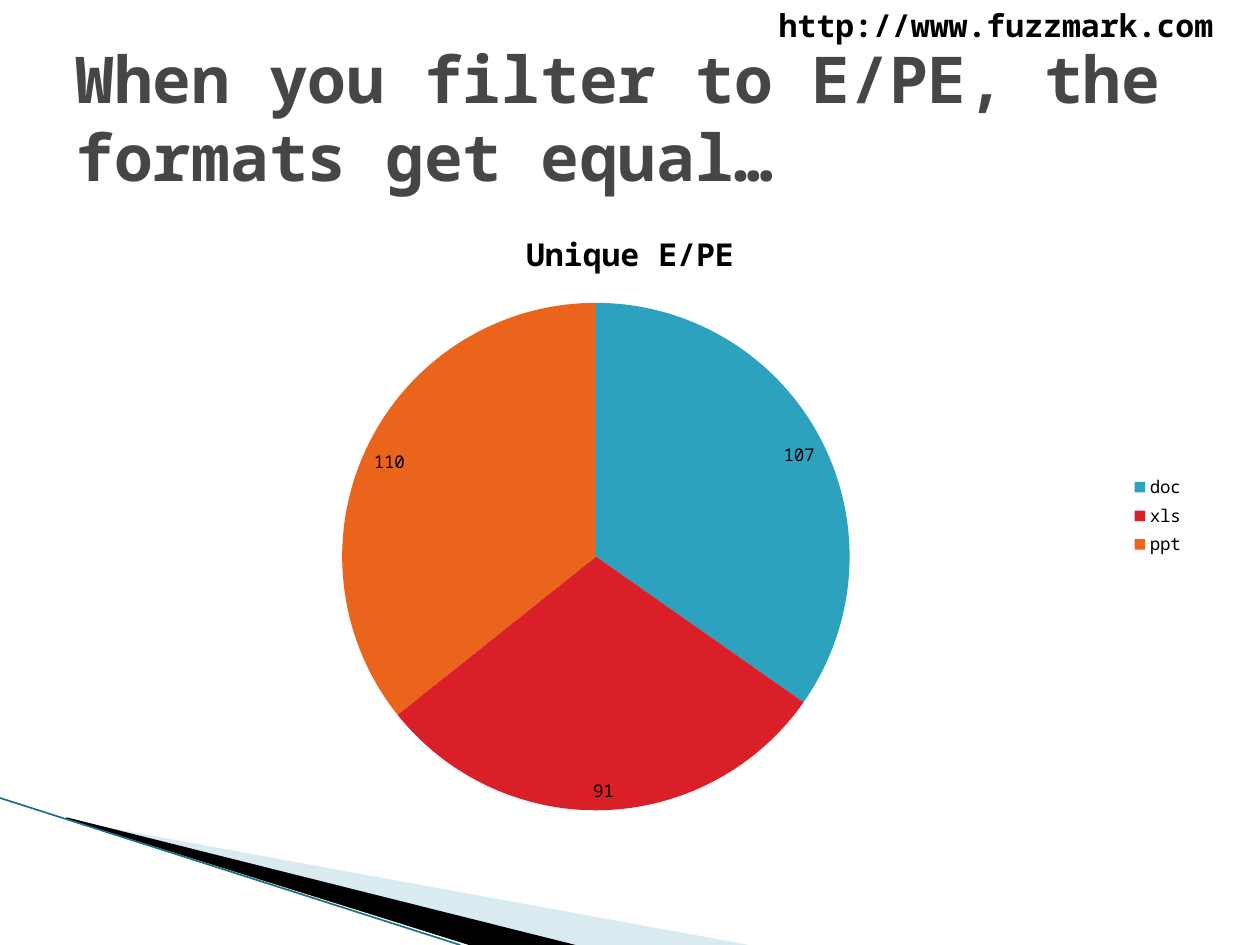
from dataclasses import dataclass

from lxml.etree import SubElement
from pptx import Presentation
from pptx.chart.data import CategoryChartData
from pptx.dml.color import RGBColor
from pptx.enum.chart import XL_CHART_TYPE, XL_LABEL_POSITION, XL_LEGEND_POSITION
from pptx.enum.shapes import MSO_CONNECTOR
from pptx.enum.text import MSO_ANCHOR
from pptx.oxml.ns import qn
from pptx.util import Pt


@dataclass(frozen=True)
class Theme:
    font: str = "Noto Sans Mono"
    ink: str = "000000"
    title: str = "464646"
    pale: str = "A0CBDC"
    edge: str = "1A7088"
    slices: tuple = ("2DA2BF", "DA1F28", "EB641B")
    title_size: float = 36.9
    heading_size: float = 18
    label_size: float = 10


THEME = Theme()


def rgb(value):
    return RGBColor.from_string(value)


def style_font(font, size, color, bold=False):
    font.name = THEME.font
    font.size = Pt(size)
    font.bold = bold
    font.color.rgb = rgb(color)


def add_text(s, box, text, size, color, anchor=MSO_ANCHOR.TOP):
    tf = s.shapes.add_textbox(*map(Pt, box)).text_frame
    tf.word_wrap = True
    tf.vertical_anchor = anchor
    tf.text = text
    style_font(tf.paragraphs[0].runs[0].font, size, color, bold=True)


def add_wedge(s, box, points, color, opacity=100):
    left, top, width, height = box
    start, *rest = [(left + x * width, top + y * height) for x, y in points]
    builder = s.shapes.build_freeform(*start, scale=Pt(1))
    builder.add_line_segments(rest, close=True)
    sp = builder.convert_to_shape()
    sp.shadow.inherit = False
    sp.line.fill.background()
    sp.fill.solid()
    sp.fill.fore_color.rgb = rgb(color)
    if opacity < 100:
        clr = sp.fill._xPr.find(qn("a:solidFill"))[0]
        SubElement(clr, qn("a:alpha")).set("val", str(opacity * 1000))


def add_corner(s, box):
    left, top, width, height = box
    add_wedge(s, (left + 39.6, top + 12, 388.8, height - 12),
              [(0, 0.01), (1, 1), (0.74, 1), (0, 0)], THEME.pale, 40)
    add_wedge(s, (left + 38.2, top + 11.3, 290.8, height - 11.3),
              [(0, 0), (1, 1), (0.79, 1), (0, 0.01)], THEME.ink)
    edge = s.shapes.add_connector(MSO_CONNECTOR.STRAIGHT, Pt(left), Pt(top),
                                  Pt(left + 263), Pt(top + height))
    edge.line.color.rgb = rgb(THEME.edge)
    edge.line.width = Pt(0.95)
    SubElement(edge._element.spPr, qn("a:effectLst"))


def add_pie(s, box, name, values):
    data = CategoryChartData()
    data.categories = list(values)
    data.add_series(name, list(values.values()))
    chart = s.shapes.add_chart(XL_CHART_TYPE.PIE, *map(Pt, box), data).chart
    style_font(chart.font, THEME.label_size, THEME.ink)

    chart.has_title = True
    tf = chart.chart_title.text_frame
    tf.text = name
    style_font(tf.paragraphs[0].runs[0].font, THEME.heading_size, THEME.ink, bold=True)

    chart.has_legend = True
    chart.legend.position = XL_LEGEND_POSITION.RIGHT
    chart.legend.include_in_layout = False

    plot = chart.plots[0]
    plot.vary_by_categories = True
    plot.has_data_labels = True
    labels = plot.data_labels
    labels.show_value = True
    labels.show_percentage = False
    labels.position = XL_LABEL_POSITION.INSIDE_END
    style_font(labels.font, THEME.label_size, THEME.ink)
    for i, color in enumerate(THEME.slices):
        fill = plot.series[0].points[i].format.fill
        fill.solid()
        fill.fore_color.rgb = rgb(color)


def main():
    prs = Presentation()
    prs.slide_width, prs.slide_height = Pt(720), Pt(540)
    s = prs.slides.add_slide(prs.slide_layouts[6])
    add_corner(s, (0, 456, 428.4, 84))
    add_text(s, (437.8, 0, 282.2, 28.8), "http://www.fuzzmark.com",
             THEME.heading_size, THEME.ink)
    add_text(s, (36, 21.6, 648, 90), "When you filter to E/PE, the formats get equal…",
             THEME.title_size, THEME.title, MSO_ANCHOR.MIDDLE)
    add_pie(s, (36, 116.6, 648, 356.4), "Unique E/PE",
            {"doc": 107, "xls": 91, "ppt": 110})
    prs.save("out.pptx")


if __name__ == "__main__":
    main()
